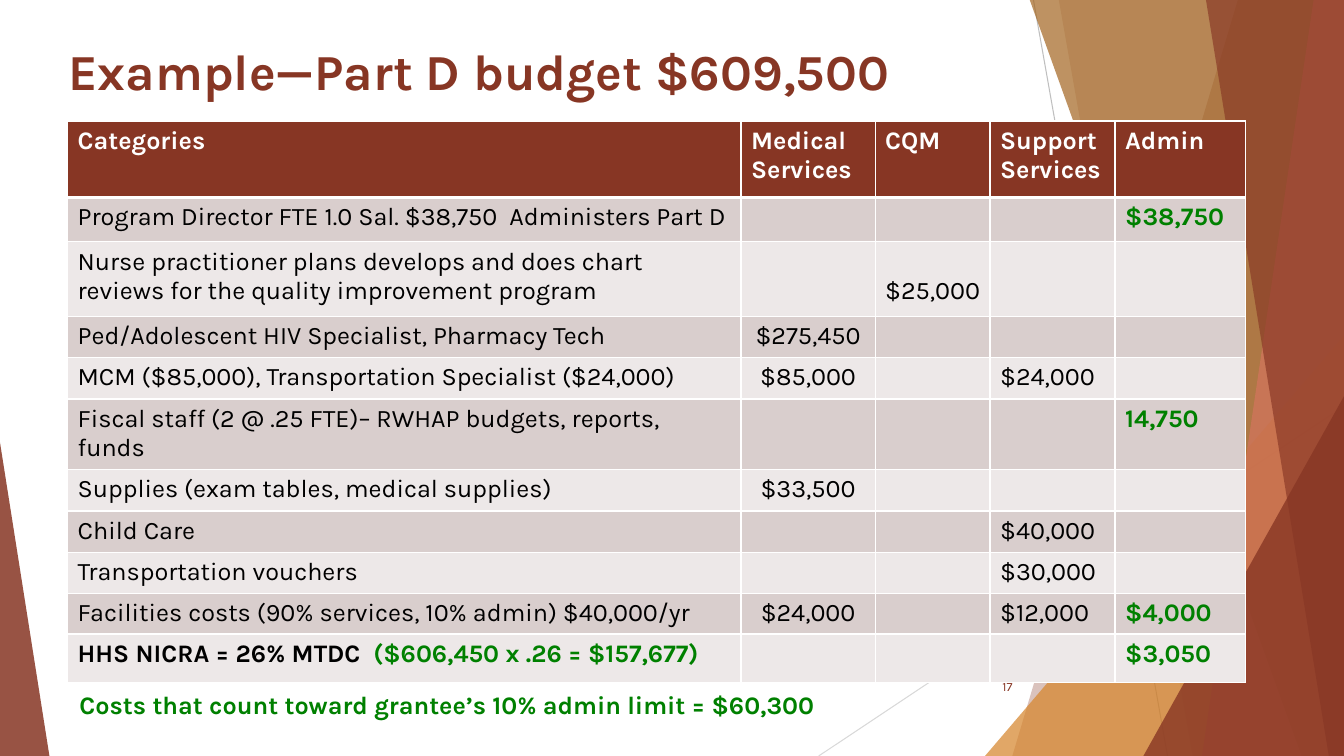
from lxml import etree
from pptx import Presentation
from pptx.dml.color import RGBColor
from pptx.enum.shapes import MSO_CONNECTOR, MSO_SHAPE
from pptx.enum.text import MSO_ANCHOR, PP_ALIGN
from pptx.oxml.ns import qn
from pptx.util import Inches, Pt

FONT = "Karla"
RUST = RGBColor(0x87, 0x36, 0x24)
ORANGE = RGBColor(0xD6, 0x86, 0x2D)
BROWN = RGBColor(0xA3, 0x65, 0x20)
CORAL = RGBColor(0xD4, 0x74, 0x5E)
GREEN = RGBColor(0x00, 0x80, 0x00)
BLACK = RGBColor(0x00, 0x00, 0x00)
WHITE = RGBColor(0xFF, 0xFF, 0xFF)
BANDS = (RGBColor(0xD9, 0xCE, 0xCD), RGBColor(0xED, 0xE8, 0xE8))

TITLE = "Example—Part D budget $609,500"
FOOTNOTE = "Costs that count toward grantee’s 10% admin limit = $60,300"
PAGE_NUMBER = "17"

HEADER = ("Categories", "Medical Services", "CQM", "Support Services", "Admin")
BUDGET = [
    ("Program Director FTE 1.0 Sal. $38,750  Administers Part D", "", "", "", "$38,750"),
    ("Nurse practitioner plans develops and does chart reviews for the quality "
     "improvement program", "", "$25,000", "", ""),
    ("Ped/Adolescent HIV Specialist, Pharmacy Tech", "$275,450", "", "", ""),
    ("MCM ($85,000), Transportation Specialist ($24,000)", "$85,000", "", "$24,000", ""),
    ("Fiscal staff (2 @ .25 FTE)– RWHAP budgets, reports, funds", "", "", "", "14,750"),
    ("Supplies (exam tables, medical supplies)", "$33,500", "", "", ""),
    ("Child Care", "", "", "$40,000", ""),
    ("Transportation vouchers", "", "", "$30,000", ""),
    ("Facilities costs (90% services, 10% admin) $40,000/yr", "$24,000", "", "$12,000", "$4,000"),
]
INDIRECT = ("HHS NICRA = 26% MTDC  ", "($606,450 x .26 = $157,677)")
INDIRECT_ADMIN = "$3,050"
COLUMN_WIDTHS = (6.68, 1.33, 1.14, 1.24, 1.29)
ROW_HEIGHTS = (0.76, 0.44, 0.74, 0.41, 0.41, 0.69, 0.41, 0.41, 0.41, 0.4, 0.48)
CENTERED_COLUMNS = (1, 2)
SECOND_LINE = (2, 2)  # the amount that sits level with the second line of its row

# Start, end, colour
HAIRLINES = [
    ((10.25, 0), (11.58, 7.5), RGBColor(0xBF, 0xBF, 0xBF)),
    ((13.33, 4.03), (8.12, 7.5), RGBColor(0xD9, 0xD9, 0xD9)),
]
# Bands reach the right edge: top x, bottom x, colour, opacity in percent
# Triangles: left, top, width, height, apex position, colour, opacity in percent
FACETS = [
    ("band", (12.28, 10.04), RUST, 30),
    ("band", (10.5, 11.83), RUST, 20),
    ("triangle", (9.77, 3.33, 3.56, 4.17, 1), ORANGE, 72),
    ("band", (10.21, 12.91), BROWN, 70),
    ("band", (13.03, 11.92), CORAL, 70),
    ("band", (11.96, 13.18), RUST, 65),
    ("triangle", (11.34, 3.93, 1.99, 3.57, 1), RUST, 80),
    ("triangle", (0, 4.39, 0.49, 3.11, 0), RUST, 85),
]
WIDTH, HEIGHT, BAND_TOP = 13.33, 7.5, -0.01


def add_hairline(page, start, end, color):
    line = page.shapes.add_connector(
        MSO_CONNECTOR.STRAIGHT, *(Inches(v) for v in start + end))
    line.line.color.rgb = color
    line.line.width = Pt(0.75)
    etree.SubElement(line._element.spPr, qn("a:effectLst"))


def add_facet(page, kind, geometry, color, opacity):
    if kind == "band":
        top_x, bottom_x = geometry
        corners = [(top_x, BAND_TOP), (WIDTH, BAND_TOP), (WIDTH, HEIGHT), (bottom_x, HEIGHT)]
        points = [(Inches(x), Inches(y)) for x, y in corners]
        builder = page.shapes.build_freeform(*points[0])
        builder.add_line_segments(points[1:], close=True)
        facet = builder.convert_to_shape()
    else:
        *frame, apex = geometry
        facet = page.shapes.add_shape(
            MSO_SHAPE.ISOSCELES_TRIANGLE, *(Inches(v) for v in frame))
        facet.adjustments[0] = apex
    facet.shadow.inherit = False
    facet.line.fill.background()
    facet.fill.solid()
    facet.fill.fore_color.rgb = color
    tint = facet._element.spPr.find(qn("a:solidFill"))[0]
    etree.SubElement(tint, qn("a:alpha"), val=str(opacity * 1000))


def add_span(para, text, size, color, bold=False):
    span = para.add_run()
    span.text = text
    span.font.name = FONT
    span.font.size = Pt(size)
    span.font.bold = bold
    span.font.color.rgb = color


def add_label(page, frame, text, size, color, bold=True,
              anchor=MSO_ANCHOR.TOP, align=PP_ALIGN.LEFT):
    box = page.shapes.add_textbox(*(Inches(v) for v in frame)).text_frame
    box.word_wrap = True
    box.vertical_anchor = anchor
    box.paragraphs[0].alignment = align
    add_span(box.paragraphs[0], text, size, color, bold)


def set_borders(cell, row):
    """Draw white cell edges, with a heavier rule under the header row."""
    widths = {"lnL": 1, "lnR": 1, "lnT": 3 if row == 1 else 1, "lnB": 3 if row == 0 else 1}
    properties = cell._tc.get_or_add_tcPr()
    for place, (edge, width) in enumerate(widths.items()):
        line = etree.Element(qn(f"a:{edge}"), w=str(Pt(width)))
        fill = etree.SubElement(line, qn("a:solidFill"))
        etree.SubElement(fill, qn("a:srgbClr"), val=str(WHITE))
        properties.insert(place, line)


def cell_spans(row, column, text):
    """Return the (text, colour, bold) runs of one cell."""
    if row == 0:
        return [(text, WHITE, True)]
    if isinstance(text, tuple):
        return [(part, color, True) for part, color in zip(text, (BLACK, GREEN))]
    is_admin = column == len(HEADER) - 1
    return [(text, GREEN if is_admin else BLACK, is_admin)] if text else []


def add_budget_table(page):
    rows = [HEADER, *BUDGET, (INDIRECT, "", "", "", INDIRECT_ADMIN)]
    table = page.shapes.add_table(
        len(rows), len(HEADER), Inches(0.67), Inches(1.2),
        Inches(sum(COLUMN_WIDTHS)), Inches(sum(ROW_HEIGHTS))).table
    for column, width in zip(table.columns, COLUMN_WIDTHS):
        column.width = Inches(width)
    for line, height in zip(table.rows, ROW_HEIGHTS):
        line.height = Inches(height)
    for r, texts in enumerate(rows):
        for c, text in enumerate(texts):
            cell = table.cell(r, c)
            cell.fill.solid()
            cell.fill.fore_color.rgb = BANDS[(r - 1) % 2] if r else RUST
            set_borders(cell, r)
            para = cell.text_frame.paragraphs[0]
            if r and c in CENTERED_COLUMNS:
                para.alignment = PP_ALIGN.CENTER
            if (r, c) == SECOND_LINE:
                cell.margin_top = Inches(0.34)
                cell.margin_left = cell.margin_right = Inches(0.04)
            for words, color, bold in cell_spans(r, c, text):
                add_span(para, words, 18, color, bold)


def main():
    deck = Presentation()
    deck.slide_width, deck.slide_height = Inches(WIDTH), Inches(HEIGHT)
    page = deck.slides.add_slide(deck.slide_layouts[6])
    for hairline in HAIRLINES:
        add_hairline(page, *hairline)
    for facet in FACETS:
        add_facet(page, *facet)
    add_label(page, (0.58, 0.35, 9.52, 0.81), TITLE, 36, RUST)
    add_budget_table(page)
    add_label(page, (9.39, 6.61, 0.75, 0.4), PAGE_NUMBER, 9, RUST, bold=False,
              anchor=MSO_ANCHOR.MIDDLE, align=PP_ALIGN.RIGHT)
    add_label(page, (0.69, 6.79, 9.2, 0.4), FOOTNOTE, 18, GREEN)
    deck.save("out.pptx")


if __name__ == "__main__":
    main()
